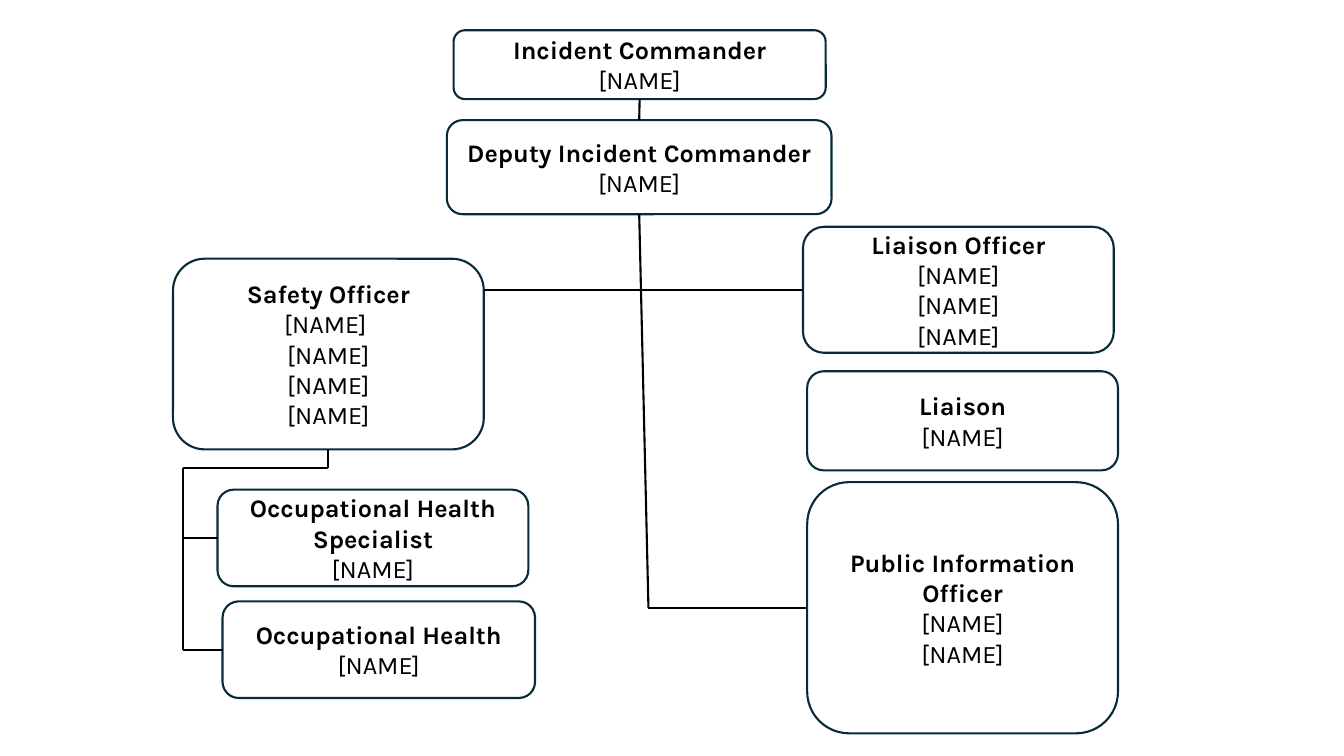
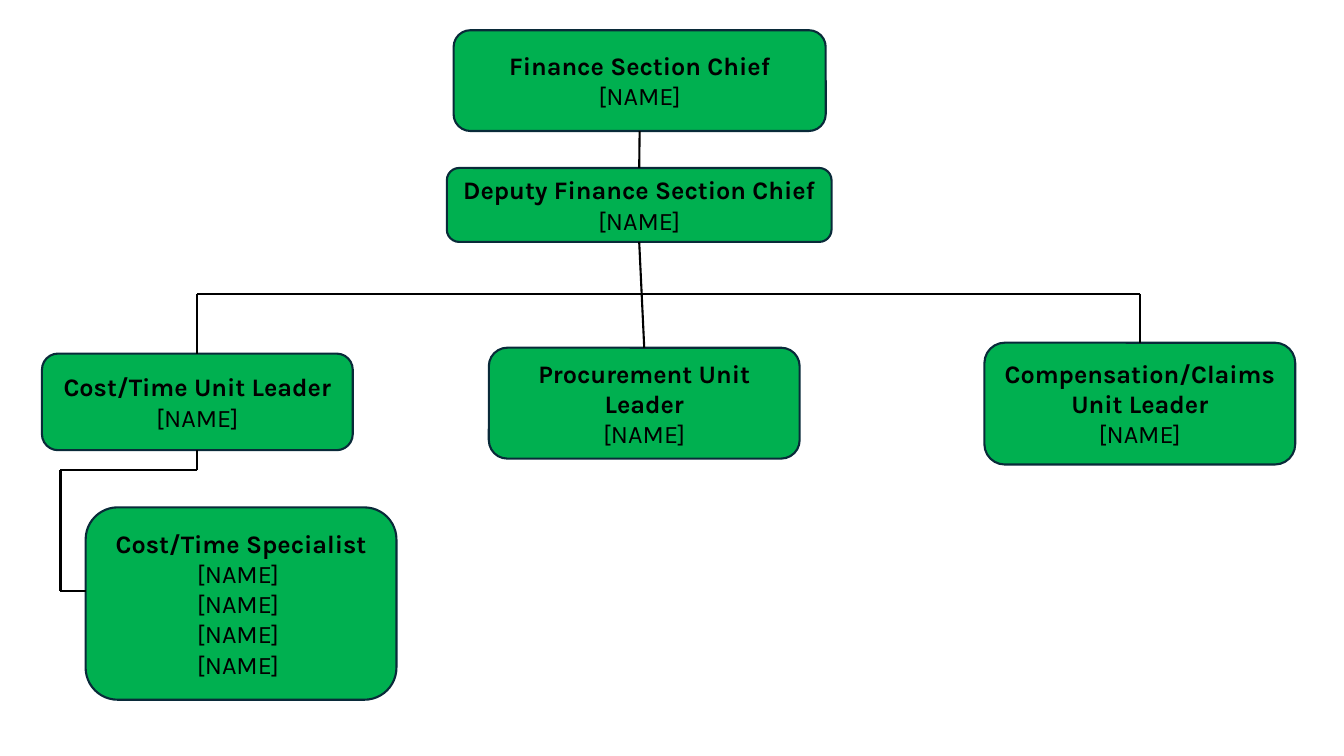
from dataclasses import dataclass

import pptx
import pptx.dml.color
import pptx.enum.shapes
import pptx.enum.text
import pptx.oxml.ns
import pptx.util
from lxml import etree

# Grid of 16 columns by 9 rows; its cells are square
COLUMNS, ROWS = 16, 9
CELL = pptx.util.Inches(7.5) // ROWS
UNIT_WIDTH = 3.7
TOP, LEFT, BOTTOM = 0, 1, 2
NAME = "[NAME]"
NAME_SPACED = "[NAME] "


@dataclass(frozen=True)
class Theme:
    font: str = "Karla"
    size: float = 18
    line_width: float = 1.5
    text: str = "000000"
    connector: str = "000000"
    outline: str = "092A39"
    command: str = "FFFFFF"
    finance: str = "00B050"


THEME = Theme()


def rgb(value):
    return pptx.dml.color.RGBColor.from_string(value)


def cells(value):
    return pptx.util.Emu(round(value * CELL))


def role_box(slide, fill, role, names, col, row, height, width=UNIT_WIDTH):
    """Draw a rounded box with a bold role above the people who hold it."""
    box = slide.shapes.add_shape(
        pptx.enum.shapes.MSO_SHAPE.ROUNDED_RECTANGLE,
        cells(col), cells(row), cells(width), cells(height))
    box.shadow.inherit = False
    box.fill.solid()
    box.fill.fore_color.rgb = rgb(fill)
    box.line.color.rgb = rgb(THEME.outline)
    box.line.width = pptx.util.Pt(THEME.line_width)
    frame = box.text_frame
    frame.word_wrap = True
    frame.vertical_anchor = pptx.enum.text.MSO_ANCHOR.MIDDLE
    frame.text = "\n".join([role, *names])
    for index, paragraph in enumerate(frame.paragraphs):
        paragraph.alignment = pptx.enum.text.PP_ALIGN.CENTER
        for run in paragraph.runs:
            run.font.name = THEME.font
            run.font.size = pptx.util.Pt(THEME.size)
            run.font.bold = index == 0
            run.font.color.rgb = rgb(THEME.text)
    return box


def side(box, site):
    """Return the middle of a box's top, left or bottom side, in cells."""
    x = box.left if site == LEFT else box.left + box.width / 2
    y = {TOP: box.top, LEFT: box.top + box.height / 2,
         BOTTOM: box.top + box.height}[site]
    return x / CELL, y / CELL


def locate(end):
    """An end is either a (box, site) pair or a (column, row) pair."""
    return end if isinstance(end[0], (int, float)) else side(*end)


def link(slide, start, end):
    """Draw a straight line, joined to any box among its ends."""
    (x1, y1), (x2, y2) = locate(start), locate(end)
    line = slide.shapes.add_connector(
        pptx.enum.shapes.MSO_CONNECTOR.STRAIGHT,
        cells(x1), cells(y1), cells(x2), cells(y2))
    line.line.color.rgb = rgb(THEME.connector)
    line.line.width = pptx.util.Pt(THEME.line_width)
    etree.SubElement(line.element.spPr, pptx.oxml.ns.qn("a:effectLst"))
    for point, connect in ((start, line.begin_connect), (end, line.end_connect)):
        if not isinstance(point[0], (int, float)):
            connect(*point)


def bracket(slide, leader, stub_row, rail_col, ends):
    """Drop from the leader to a rail on the left that feeds each end."""
    stub = (side(leader, BOTTOM)[0], stub_row)
    link(slide, (leader, BOTTOM), stub)
    link(slide, stub, (rail_col, stub_row))
    link(slide, (rail_col, stub_row), (rail_col, locate(ends[-1])[1]))
    for end in ends:
        link(slide, (rail_col, locate(end)[1]), end)


def leaders(slide, fill, chief, chief_height, deputy, deputy_row, deputy_height):
    """Draw the chief above the deputy and return the deputy's box."""
    chief_box = role_box(slide, fill, chief, [NAME], 5.4, 0.36, chief_height, 4.43)
    deputy_box = role_box(slide, fill, deputy, [NAME], 5.32, deputy_row,
                          deputy_height, 4.58)
    link(slide, (chief_box, BOTTOM), (deputy_box, TOP))
    return deputy_box


def command_slide(slide):
    fill = THEME.command
    deputy = leaders(slide, fill, "Incident Commander", 0.82,
                     "Deputy Incident Commander", 1.43, 1.12)

    # Liaison and public information
    liaison_officer = role_box(slide, fill, "Liaison Officer", [NAME] * 3,
                               9.56, 2.7, 1.5)
    role_box(slide, fill, "Liaison", [NAME], 9.61, 4.42, 1.18)
    information = role_box(slide, fill, "Public Information Officer", [NAME] * 2,
                           9.61, 5.74, 2.99)

    # Safety and occupational health
    safety = role_box(slide, fill, "Safety Officer", [NAME_SPACED] + [NAME] * 3,
                      2.06, 3.08, 2.27)
    specialist = role_box(slide, fill, "Occupational Health Specialist", [NAME],
                          2.59, 5.83, 1.15)
    health = role_box(slide, fill, "Occupational Health", [NAME],
                      2.65, 7.16, 1.15, 3.72)

    # Reporting lines
    trunk_foot = (7.72, side(information, LEFT)[1])
    link(slide, (deputy, BOTTOM), trunk_foot)
    link(slide, trunk_foot, (information, LEFT))
    safety_right = (safety.left + safety.width) / CELL
    link(slide, (safety_right, side(liaison_officer, LEFT)[1]),
         (liaison_officer, LEFT))
    bracket(slide, safety, 5.57, 2.18, [(specialist, LEFT), (health, LEFT)])


def finance_slide(slide):
    fill = THEME.finance
    deputy = leaders(slide, fill, "Finance Section Chief", 1.2,
                     "Deputy Finance Section Chief", 2, 0.88)

    # Units
    cost = role_box(slide, fill, "Cost/Time Unit Leader", [NAME], 0.5, 4.21, 1.15)
    procurement = role_box(slide, fill, "Procurement Unit Leader", [NAME],
                           5.82, 4.14, 1.32)
    claims = role_box(slide, fill, "Compensation/Claims Unit Leader", [NAME],
                      11.72, 4.08, 1.45)
    role_box(slide, fill, "Cost/Time Specialist", [NAME_SPACED] * 4,
             1.02, 6.04, 2.29)

    # Reporting lines
    bar_row = 3.5
    bar_ends = [(side(unit, TOP)[0], bar_row) for unit in (cost, claims)]
    link(slide, *bar_ends)
    for bar_end, unit in zip(bar_ends, (cost, claims)):
        link(slide, bar_end, (unit, TOP))
    link(slide, (deputy, BOTTOM), (procurement, TOP))
    bracket(slide, cost, 5.59, 0.72, [(1.02, 7.04)])


def main():
    deck = pptx.Presentation()
    deck.slide_width, deck.slide_height = cells(COLUMNS), cells(ROWS)
    blank = deck.slide_layouts[6]
    for build in (command_slide, finance_slide):
        build(deck.slides.add_slide(blank))
    deck.save("out.pptx")


if __name__ == "__main__":
    main()
